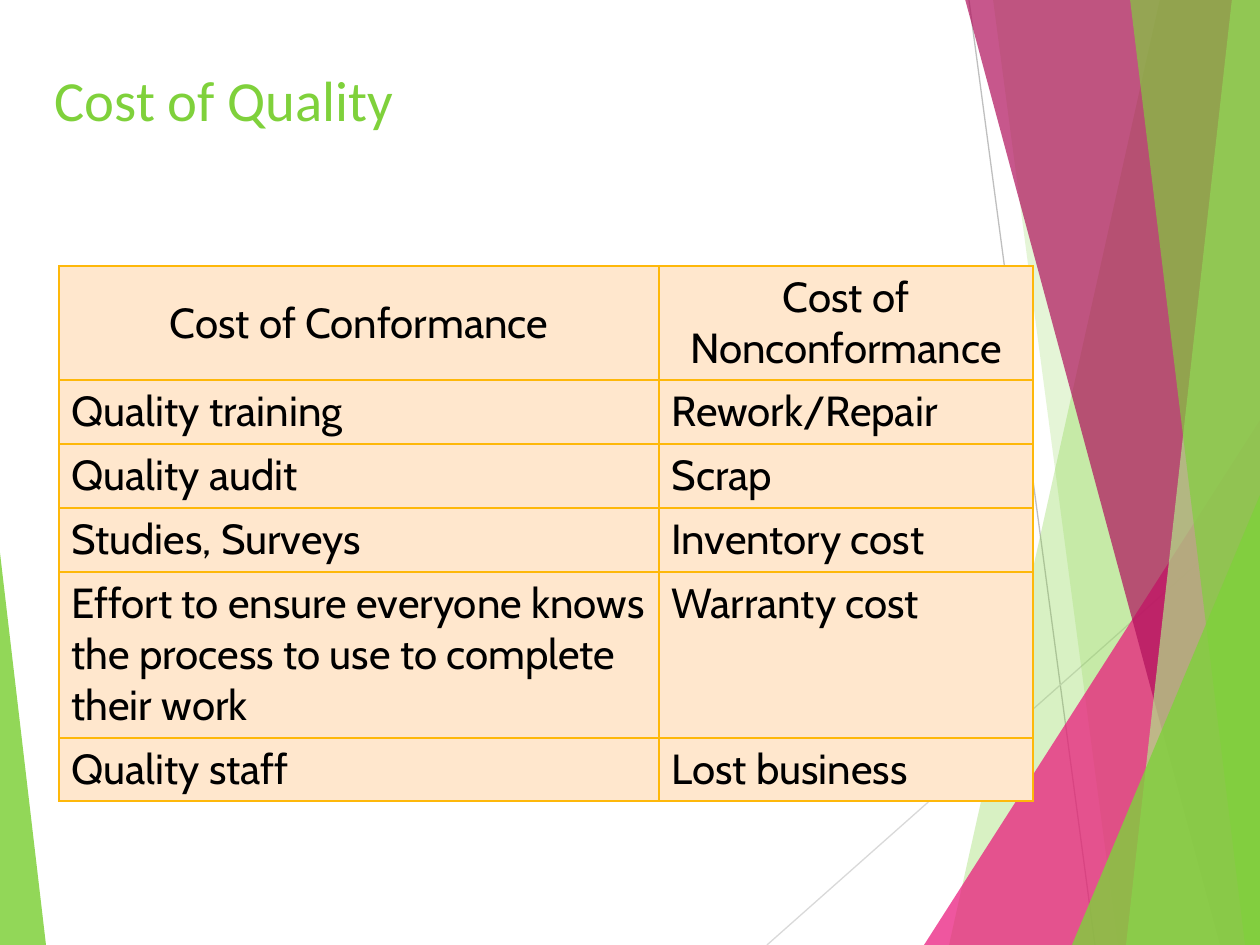
import pptx
import pptx.util
import pptx.dml.color
import pptx.enum.shapes
import pptx.enum.text
import pptx.oxml
import pptx.oxml.ns
from lxml import etree

PX = 914400 / 126
WIDTH, HEIGHT = 1260, 945
GREEN, PINK, PLUM, LIME = "7FD13B", "EA157A", "B0105C", "B2E389"
GOLD, PEACH, BLACK = "FEB80A", "FFE7CD", "000000"

TITLE = "Cost of Quality"
ROWS = [
    ("Cost of Conformance", "Cost of Nonconformance"),
    ("Quality training", "Rework/Repair"),
    ("Quality audit", "Scrap"),
    ("Studies, Surveys", "Inventory cost"),
    ("Effort to ensure everyone knows the process to use to complete their work", "Warranty cost"),
    ("Quality staff", "Lost business"),
]
COLUMN_WIDTHS = [600, 374]
ROW_HEIGHTS = [114, 64, 64, 64, 166, 63]
TABLE_LEFT, TABLE_TOP = 59, 266

RAYS = [
    ((969, 0), (1095, HEIGHT), "BFBFBF"),
    ((WIDTH, 508), (767, HEIGHT), "D9D9D9"),
]
BANDS_BEHIND = [(1160, 949, GREEN, 30), (993, 1118, GREEN, 20)]
BANDS_FRONT = [(965, 1220, PLUM, 70), (1232, 1126, LIME, 70), (1130, 1245, GREEN, 65)]
WEDGE_BEHIND = [(924, 420, 336, 1, PINK, 72)]
WEDGES_FRONT = [(1072, 495, 188, 1, GREEN, 80), (0, 553, 46, 0, GREEN, 85)]


def px(value):
    return pptx.util.Emu(round(value * PX))


def color(value):
    return pptx.dml.color.RGBColor.from_string(value)


def paint(shape, value, opacity):
    shape.shadow.inherit = False
    shape.line.fill.background()
    shape.fill.solid()
    shape.fill.fore_color.rgb = color(value)
    tint = shape.fill._xPr.find(".//" + pptx.oxml.ns.qn("a:srgbClr"))
    etree.SubElement(tint, pptx.oxml.ns.qn("a:alpha"), val=str(opacity * 1000))


def add_ray(page, start, end, value):
    ray = page.shapes.add_connector(
        pptx.enum.shapes.MSO_CONNECTOR.STRAIGHT, *map(px, start + end))
    ray.line.color.rgb = color(value)
    ray.line.width = pptx.util.Pt(0.75)
    etree.SubElement(ray._element.spPr, pptx.oxml.ns.qn("a:effectLst"))


def add_band(page, top_left, bottom_left, value, opacity):
    builder = page.shapes.build_freeform(top_left, -1, scale=PX)
    builder.add_line_segments([(WIDTH, -1), (WIDTH, HEIGHT), (bottom_left, HEIGHT)], close=True)
    paint(builder.convert_to_shape(), value, opacity)


def add_wedge(page, left, top, width, apex, value, opacity):
    wedge = page.shapes.add_shape(
        pptx.enum.shapes.MSO_SHAPE.ISOSCELES_TRIANGLE,
        px(left), px(top), px(width), px(HEIGHT - top))
    wedge.adjustments[0] = apex
    paint(wedge, value, opacity)


def write(frame, text, *, font, size, value, align=pptx.enum.text.PP_ALIGN.LEFT):
    para = frame.paragraphs[0]
    para.alignment = align
    span = para.add_run()
    span.text = text
    span.font.name = font
    span.font.size = pptx.util.Pt(size)
    span.font.color.rgb = color(value)


def add_borders(cell):
    properties = cell._tc.get_or_add_tcPr()
    for index, side in enumerate(("lnL", "lnR", "lnT", "lnB")):
        properties.insert(index, pptx.oxml.parse_xml(
            f'<a:{side} {pptx.oxml.ns.nsdecls("a")} w="12700"><a:solidFill>'
            f'<a:srgbClr val="{GOLD}"/></a:solidFill></a:{side}>'))


def add_cost_table(page):
    table = page.shapes.add_table(
        len(ROWS), len(COLUMN_WIDTHS), px(TABLE_LEFT), px(TABLE_TOP),
        px(sum(COLUMN_WIDTHS)), px(sum(ROW_HEIGHTS))).table
    table.first_row = table.horz_banding = False
    for column, width in zip(table.columns, COLUMN_WIDTHS):
        column.width = px(width)
    for row_index, (row, height, texts) in enumerate(zip(table.rows, ROW_HEIGHTS, ROWS)):
        row.height = px(height)
        header = row_index == 0
        for cell, text in zip(row.cells, texts):
            cell.fill.solid()
            cell.fill.fore_color.rgb = color(PEACH)
            add_borders(cell)
            align = pptx.enum.text.PP_ALIGN.LEFT
            if header:
                align = pptx.enum.text.PP_ALIGN.CENTER
                cell.vertical_anchor = pptx.enum.text.MSO_ANCHOR.MIDDLE
            write(cell.text_frame, text, font="Cabin", size=24, value=BLACK, align=align)


def main():
    deck = pptx.Presentation()
    deck.slide_width, deck.slide_height = px(WIDTH), px(HEIGHT)
    page = deck.slides.add_slide(deck.slide_layouts[6])
    for ray in RAYS:
        add_ray(page, *ray)
    for bands, wedges in ((BANDS_BEHIND, WEDGE_BEHIND), (BANDS_FRONT, WEDGES_FRONT)):
        for band in bands:
            add_band(page, *band)
        for wedge in wedges:
            add_wedge(page, *wedge)
    box = page.shapes.add_textbox(px(42), px(59), px(1050), px(53))
    box.text_frame.word_wrap = True
    write(box.text_frame, TITLE, font="Calibri", size=32.4, value=GREEN)
    add_cost_table(page)
    deck.save("out.pptx")


if __name__ == "__main__":
    main()
